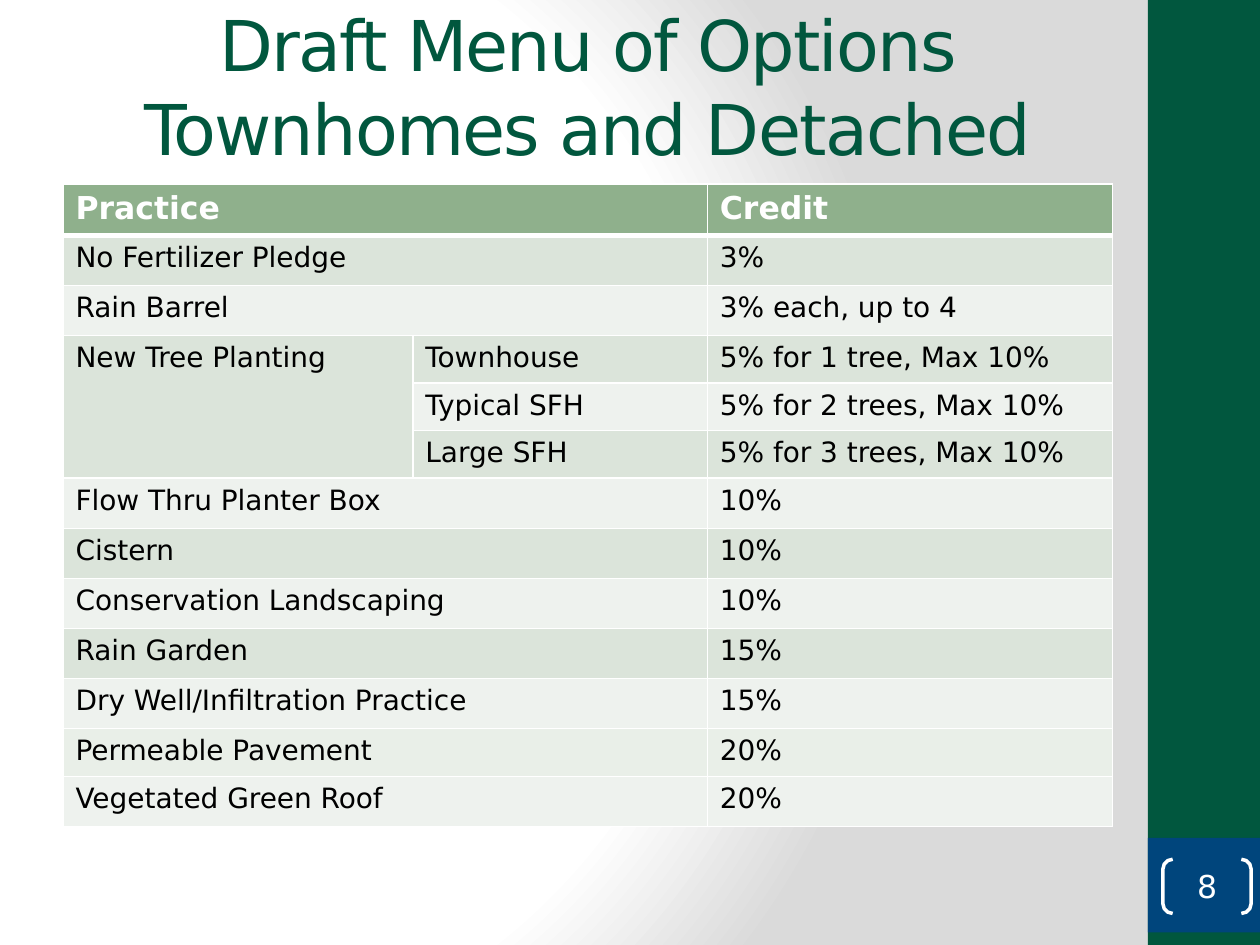
from pptx import Presentation
from pptx.dml.color import RGBColor
from pptx.enum.shapes import MSO_SHAPE as Shape
from pptx.enum.text import MSO_ANCHOR as Anchor, PP_ALIGN as Align
from pptx.oxml import parse_xml
from pptx.oxml.ns import nsdecls
from pptx.util import Inches, Pt

GREEN, BLUE, WHITE, BLACK = "01573E", "00457C", "FFFFFF", "000000"
HEADER, BAND_DARK, BAND_LIGHT, BAND_SOFT = "8FB08C", "DBE4DA", "EEF2EE", "E9EFE8"
TALL, SHORT = 0.4, 0.38

PRACTICES = [
    ("Practice", "", "Credit", HEADER, 0.41),
    ("No Fertilizer Pledge", "", "3%", BAND_DARK, TALL),
    ("Rain Barrel", "", "3% each, up to 4", BAND_LIGHT, TALL),
    ("New Tree Planting", "Townhouse", "5% for 1 tree, Max 10%", BAND_DARK, SHORT),
    ("", "Typical SFH", "5% for 2 trees, Max 10%", BAND_LIGHT, SHORT),
    ("", "Large SFH", "5% for 3 trees, Max 10%", BAND_DARK, SHORT),
    ("Flow Thru Planter Box", "", "10%", BAND_LIGHT, TALL),
    ("Cistern", "", "10%", BAND_DARK, TALL),
    ("Conservation Landscaping", "", "10%", BAND_LIGHT, TALL),
    ("Rain Garden", "", "15%", BAND_DARK, TALL),
    ("Dry Well/Infiltration Practice", "", "15%", BAND_LIGHT, TALL),
    ("Permeable Pavement", "", "20%", BAND_SOFT, SHORT),
    ("Vegetated Green Roof", "", "20%", BAND_LIGHT, TALL),
]
TREE_ROWS = (3, 5)


def color(value):
    """Turn a hex string into a colour."""
    return RGBColor.from_string(value)


class Deck:
    """Style and current slide, on a grid of 20 columns by 15 rows."""

    font = "DejaVu Sans"
    unit = Inches(0.5)

    def __init__(self):
        """Open a presentation with one blank slide."""
        self.presentation = Presentation()
        self.presentation.slide_width = 20 * self.unit
        self.presentation.slide_height = 15 * self.unit
        self.slide = self.presentation.slides.add_slide(self.presentation.slide_layouts[6])

    def place(self, *cells):
        """Convert grid cells to lengths."""
        return [round(cell * self.unit) for cell in cells]

    def background(self, stops):
        """Fill the slide with a circular gradient."""
        marks = "".join(
            f'<a:gs pos="{share * 1000}"><a:srgbClr val="{tint}"/></a:gs>' for share, tint in stops
        )
        self.slide.element.cSld.insert(0, parse_xml(
            f'<p:bg {nsdecls("p", "a")}><p:bgPr><a:gradFill rotWithShape="1"><a:gsLst>{marks}</a:gsLst>'
            '<a:path path="circle"><a:fillToRect l="20000" t="50000" r="100000" b="50000"/></a:path>'
            '</a:gradFill><a:effectLst/></p:bgPr></p:bg>'
        ))

    def put_text(self, frame, text, size, tint, align=Align.LEFT, bold=False, spacing=0):
        """Set and format the single paragraph of a text frame."""
        paragraph = frame.paragraphs[0]
        paragraph.text = text
        paragraph.alignment = align
        for run in paragraph.runs:
            run.font.name, run.font.size, run.font.bold = self.font, Pt(size), bold
            run.font.color.rgb = color(tint)
            if spacing:
                run.font._element.set("spc", str(spacing * 100))

    def title(self, text, *area):
        """Add the centred heading."""
        frame = self.slide.shapes.add_textbox(*self.place(*area)).text_frame
        frame.word_wrap = True
        frame.vertical_anchor = Anchor.MIDDLE
        self.put_text(frame, text, 40, GREEN, Align.CENTER, spacing=-1)

    def panel(self, tint, *area):
        """Add a plain filled rectangle."""
        panel = self.slide.shapes.add_shape(Shape.RECTANGLE, *self.place(*area))
        panel.shadow.inherit = False
        panel.fill.solid()
        panel.fill.fore_color.rgb = color(tint)
        panel.line.fill.background()

    def page_number(self, text, *area):
        """Add the page number between brackets."""
        brackets = self.slide.shapes.add_shape(Shape.DOUBLE_BRACKET, *self.place(*area))
        brackets.shadow.inherit = False
        brackets.adjustments[0] = 0.18
        brackets.fill.background()
        brackets.line.color.rgb = color(WHITE)
        brackets.line.width = Pt(2)
        frame = brackets.text_frame
        frame.margin_left = frame.margin_right = frame.margin_top = frame.margin_bottom = 0
        frame.vertical_anchor = Anchor.MIDDLE
        self.put_text(frame, text, 18, WHITE, Align.CENTER)

    def borders(self, cell, **widths):
        """Draw white cell borders, one point unless stated."""
        properties = cell._tc.get_or_add_tcPr()
        for side in "LRTB":
            properties.append(parse_xml(
                f'<a:ln{side} {nsdecls("a")} w="{Pt(widths.get(side, 1))}"><a:solidFill>'
                f'<a:srgbClr val="{WHITE}"/></a:solidFill></a:ln{side}>'
            ))

    def table(self, rows, shares, joined_rows, *area):
        """Add the table, merging label cells that have no sub-label."""
        left, top, width, height = self.place(*area)
        table = self.slide.shapes.add_table(len(rows), len(shares), left, top, width, height).table
        for column, share in zip(table.columns, shares):
            column.width = round(width * share / sum(shares))
        total = sum(row[-1] for row in rows)
        first, last = joined_rows
        for index, (*texts, band, weight) in enumerate(rows):
            table.rows[index].height = round(height * weight / total)
            header = index == 0
            rule = {0: {"B": 3}, 1: {"T": 3}}.get(index, {})
            for column, text in enumerate(texts):
                cell = table.cell(index, column)
                self.borders(cell, **rule)
                cell.fill.solid()
                cell.fill.fore_color.rgb = color(band)
                if text:
                    self.put_text(cell.text_frame, text, 18 if header else 16,
                                  WHITE if header else BLACK, bold=header)
            if not first <= index <= last:
                table.cell(index, 0).merge(table.cell(index, 1))
        table.cell(first, 0).merge(table.cell(last, 0))


def main():
    """Build the slide and save it."""
    deck = Deck()
    deck.background([(0, WHITE), (75, WHITE), (100, "DADADA")])
    deck.panel(GREEN, 18.22, 0, 1.78, 15)
    deck.panel(BLUE, 18.22, 13.3, 1.78, 1.5)
    deck.title("Draft Menu of Options\nTownhomes and Detached", 1, 0.6, 16.66, 1.5)
    deck.table(PRACTICES, (2.78, 2.34, 3.22), TREE_ROWS, 1, 2.92, 16.66, 10.2)
    deck.page_number("8", 18.46, 13.64, 1.4, 0.86)
    deck.presentation.save("out.pptx")


if __name__ == "__main__":
    main()
